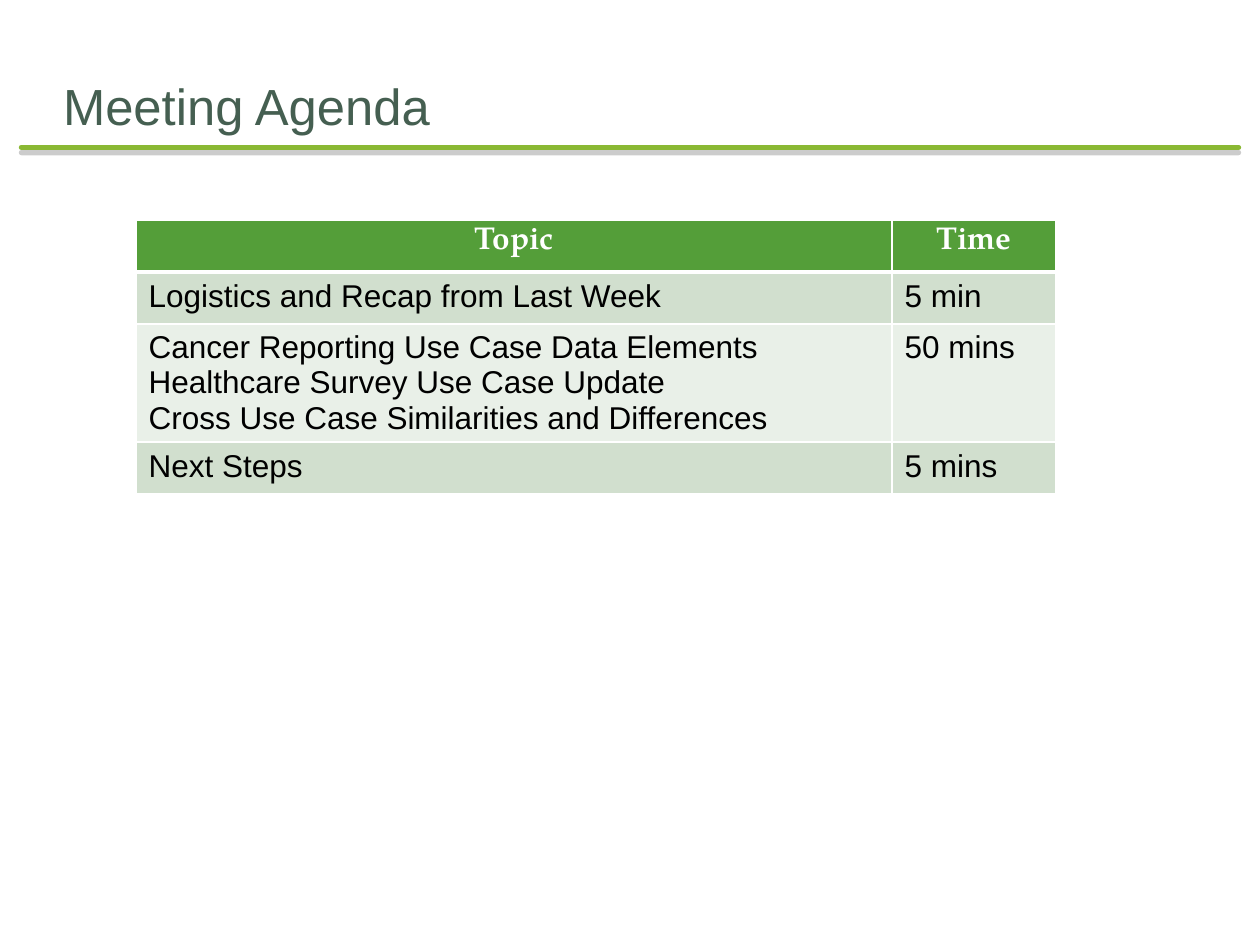
from dataclasses import dataclass

from lxml.etree import SubElement
from pptx import Presentation
from pptx.dml.color import RGBColor
from pptx.enum.shapes import MSO_CONNECTOR
from pptx.enum.text import MSO_ANCHOR, MSO_AUTO_SIZE, PP_ALIGN
from pptx.oxml import parse_xml
from pptx.oxml.ns import nsdecls, qn
from pptx.util import Inches, Pt


@dataclass(frozen=True)
class Theme:
    title: str = "455F51"
    rule: str = "8AB833"
    header: str = "549E39"
    bands: tuple = ("D1DFCE", "E9F0E8")
    light: str = "FFFFFF"
    dark: str = "000000"
    body_font: str = "Arial"
    header_font: str = "TeX Gyre Pagella"
    title_size: int = 29
    table_size: int = 18


theme = Theme()


def write(frame, text, *, font, size, color, bold=False, align=PP_ALIGN.LEFT):
    """Fill a text frame, one paragraph per line of text."""
    frame.text = text
    for para in frame.paragraphs:
        para.alignment = align
        for span in para.runs:
            span.font.name = font
            span.font.size = Pt(size)
            span.font.bold = bold
            span.font.color.rgb = RGBColor.from_string(color)


def add_borders(cell, color, **widths):
    """Draw cell borders; widths are points by side: L, R, T, B."""
    properties = cell._tc.get_or_add_tcPr()
    for side, width in widths.items():
        line = SubElement(properties, qn(f"a:ln{side}"), w=str(Pt(width)))
        fill = SubElement(line, qn("a:solidFill"))
        SubElement(fill, qn("a:srgbClr"), val=color)


# Deck and page
deck = Presentation()
deck.slide_width, deck.slide_height = Inches(10), Inches(7.5)
page = deck.slides.add_slide(deck.slide_layouts[5])

# Rule under the title, with a hard shadow below it
margin, rule_top = Inches(0.17), Inches(1.17)
rule = page.shapes.add_connector(
    MSO_CONNECTOR.STRAIGHT, margin, rule_top, deck.slide_width - margin, rule_top)
rule.line.width = Pt(3)
rule.line.color.rgb = RGBColor.from_string(theme.rule)
rule.line._get_or_add_ln().set("cap", "rnd")
rule._element.spPr.append(parse_xml(
    f'<a:effectLst {nsdecls("a")}>'
    f'<a:outerShdw blurRad="0" dist="{Pt(3)}" dir="5400000" rotWithShape="0">'
    '<a:srgbClr val="808080"><a:alpha val="40000"/></a:srgbClr>'
    '</a:outerShdw></a:effectLst>'))

# Title
title = page.shapes.title
title.left, title.top = Inches(0.5), Inches(0.5)
title.width, title.height = Inches(9), Inches(0.58)
frame = title.text_frame
frame.word_wrap = True
frame.auto_size = MSO_AUTO_SIZE.NONE
frame.vertical_anchor = MSO_ANCHOR.BOTTOM
frame.margin_left = frame.margin_right = frame.margin_bottom = 0
frame.margin_top = Inches(0.05)
write(frame, "Meeting Agenda", font=theme.body_font, size=theme.title_size,
      color=theme.title)

# Agenda table: header row, then banded rows
agenda = [
    ("Topic", "Time"),
    ("Logistics and Recap from Last Week", "5 min"),
    ("Cancer Reporting Use Case Data Elements\n"
     "Healthcare Survey Use Case Update\n"
     "Cross Use Case Similarities and Differences", "50 mins"),
    ("Next Steps", "5 mins"),
]
column_widths = (6, 1.3)
row_heights = (0.41, 0.41, 0.94, 0.41)
table = page.shapes.add_table(
    len(agenda), len(column_widths), Inches(1.08), Inches(1.75),
    Inches(sum(column_widths)), Inches(sum(row_heights))).table
for column, width in zip(table.columns, column_widths):
    column.width = Inches(width)

header_style = dict(font=theme.header_font, color=theme.light, bold=True,
                    align=PP_ALIGN.CENTER)
body_style = dict(font=theme.body_font, color=theme.dark)
for index, (texts, height) in enumerate(zip(agenda, row_heights)):
    table.rows[index].height = Inches(height)
    is_header = index == 0
    shade = theme.header if is_header else theme.bands[(index - 1) % 2]
    for cell, text in zip(table.rows[index].cells, texts):
        write(cell.text_frame, text, size=theme.table_size,
              **(header_style if is_header else body_style))
        add_borders(cell, theme.light, L=1, R=1,
                    T=3 if index == 1 else 1, B=3 if is_header else 1)
        cell.fill.solid()
        cell.fill.fore_color.rgb = RGBColor.from_string(shade)

deck.save("out.pptx")
